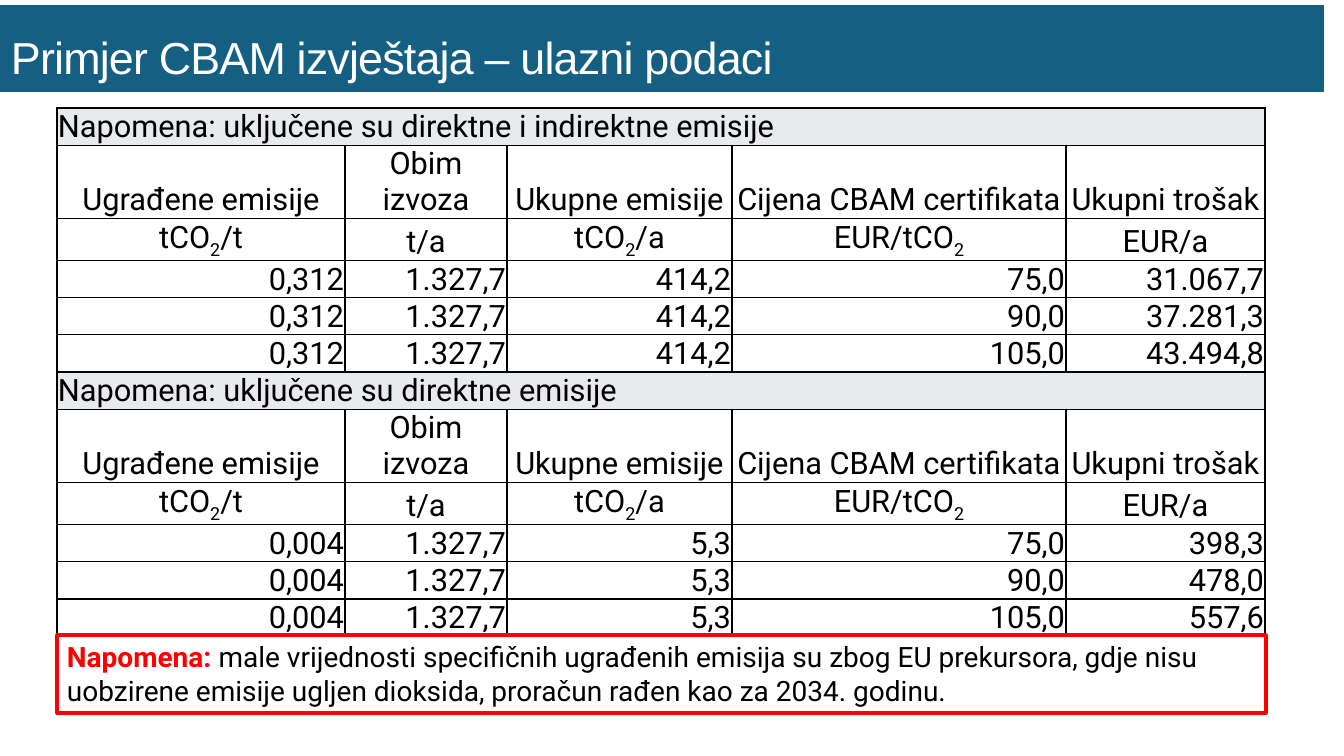
from lxml.etree import SubElement
from pptx import Presentation
from pptx.dml.color import RGBColor
from pptx.enum.text import MSO_ANCHOR, MSO_AUTO_SIZE, PP_ALIGN
from pptx.oxml import parse_xml
from pptx.oxml.ns import nsdecls, qn
from pptx.util import Emu, Pt

TEAL = RGBColor(0x15, 0x60, 0x82)
GREY = RGBColor(0xE8, 0xEA, 0xED)
WHITE = RGBColor(0xFF, 0xFF, 0xFF)
BLACK = RGBColor(0, 0, 0)
RED = RGBColor(0xFF, 0, 0)

TITLE_FONT = {"name": "Arial", "size": Pt(32), "bold": False}
TABLE_FONT = {"name": "Roboto", "size": Pt(22), "bold": False}
NOTE_FONT = {"name": "Roboto", "size": Pt(20), "bold": False}
NOTE_LABEL_FONT = {**NOTE_FONT, "bold": True}

COLUMN_WIDTHS = [288, 162, 225, 334, 199]
SECTION_HEIGHTS = [37, 73, 42, 37, 37, 37]
HEADINGS = ["Ugrađene emisije", "Obim izvoza", "Ukupne emisije",
            "Cijena CBAM certifikata", "Ukupni trošak"]
UNITS = ["tCO|2|/t", "t/a", "tCO|2|/a", "EUR/tCO|2", "EUR/a"]
PRICES = ["75,0", "90,0", "105,0"]
EXPORT_VOLUME = "1.327,7"
SECTIONS = [
    ("Napomena: uključene su direktne i indirektne emisije",
     "0,312", "414,2", ["31.067,7", "37.281,3", "43.494,8"]),
    ("Napomena: uključene su direktne emisije",
     "0,004", "5,3", ["398,3", "478,0", "557,6"]),
]


def px(count):
    return Emu(round(count * 914400 / 100.8))


class SlideBuilder:
    def __init__(self):
        self.deck = Presentation()
        self.deck.slide_width, self.deck.slide_height = px(1344), px(756)
        self.page = self.deck.slides.add_slide(self.deck.slide_layouts[5])

    def span(self, para, text, style, color):
        span = para.add_run()
        span.text = text
        for name, value in style.items():
            setattr(span.font, name, value)
        span.font.color.rgb = color
        return span

    def title(self, text, left, top, width, height):
        box = self.page.shapes.title
        box.left, box.top = px(left), px(top)
        box.width, box.height = px(width), px(height)
        outline = SubElement(box.element.spPr, qn("a:prstGeom"), prst="homePlate")
        SubElement(outline, qn("a:avLst"))
        box.fill.solid()
        box.fill.fore_color.rgb = TEAL
        frame = box.text_frame
        frame.auto_size = MSO_AUTO_SIZE.NONE
        frame.vertical_anchor = MSO_ANCHOR.MIDDLE
        frame.margin_left = frame.margin_right = px(11)
        frame.margin_top = frame.margin_bottom = px(5)
        para = frame.paragraphs[0]
        para.alignment = PP_ALIGN.LEFT
        para.line_spacing = Pt(49.8)
        span = self.span(para, text, TITLE_FONT, WHITE)
        span.font._element.set("spc", "-60")

    def cell(self, cell, text, alignment, fill):
        properties = cell._tc.get_or_add_tcPr()
        for side in ("lnL", "lnR", "lnT", "lnB"):
            properties.append(parse_xml(
                f'<a:{side} {nsdecls("a")} w="12700"><a:solidFill>'
                f'<a:srgbClr val="{BLACK}"/></a:solidFill></a:{side}>'))
        cell.fill.solid()
        cell.fill.fore_color.rgb = fill
        cell.vertical_anchor = MSO_ANCHOR.BOTTOM
        cell.margin_left = cell.margin_right = cell.margin_top = px(1)
        cell.margin_bottom = 0
        para = cell.text_frame.paragraphs[0]
        para.alignment = alignment
        for index, part in enumerate(text.split("|")):
            span = self.span(para, part, TABLE_FONT, BLACK)
            if index % 2:
                span.font._element.set("baseline", "-25000")

    def table(self, rows, left, top, widths, heights):
        table = self.page.shapes.add_table(
            len(rows), len(widths), px(left), px(top),
            px(sum(widths)), px(sum(heights))).table
        table.first_row = table.horz_banding = False
        for column, width in zip(table.columns, widths):
            column.width = px(width)
        for row, height, (texts, alignment, fill) in zip(table.rows, heights, rows):
            row.height = px(height)
            cells = list(row.cells)
            if len(texts) == 1:
                cells[0].merge(cells[-1])
            padded = texts + [""] * (len(cells) - len(texts))
            for cell, text in zip(cells, padded):
                self.cell(cell, text, alignment, fill)

    def note(self, label, text, left, top, width, height):
        box = self.page.shapes.add_textbox(px(left), px(top), px(width), px(height))
        box.line.color.rgb = RED
        box.line.width = Pt(2.25)
        box.text_frame.word_wrap = True
        para = box.text_frame.paragraphs[0]
        self.span(para, label, NOTE_LABEL_FONT, RED)
        self.span(para, text, NOTE_FONT, BLACK)


def emission_rows():
    rows = []
    for caption, intensity, total, costs in SECTIONS:
        rows.append(([caption], PP_ALIGN.LEFT, GREY))
        rows.append((HEADINGS, PP_ALIGN.CENTER, WHITE))
        rows.append((UNITS, PP_ALIGN.CENTER, WHITE))
        for price, cost in zip(PRICES, costs):
            values = [intensity, EXPORT_VOLUME, total, price, cost]
            rows.append((values, PP_ALIGN.RIGHT, WHITE))
    return rows


def main():
    builder = SlideBuilder()
    builder.title("Primjer CBAM izvještaja – ulazni podaci", 0, 5, 1324, 87)
    builder.table(emission_rows(), 57, 108, COLUMN_WIDTHS,
                  SECTION_HEIGHTS * len(SECTIONS))
    builder.note("Napomena: ",
                 "male vrijednosti specifičnih ugrađenih emisija su zbog EU "
                 "prekursora, gdje nisu uobzirene emisije ugljen dioksida, "
                 "proračun rađen kao za 2034. godinu.", 57, 635, 1209, 78)
    builder.deck.save("out.pptx")


if __name__ == "__main__":
    main()
